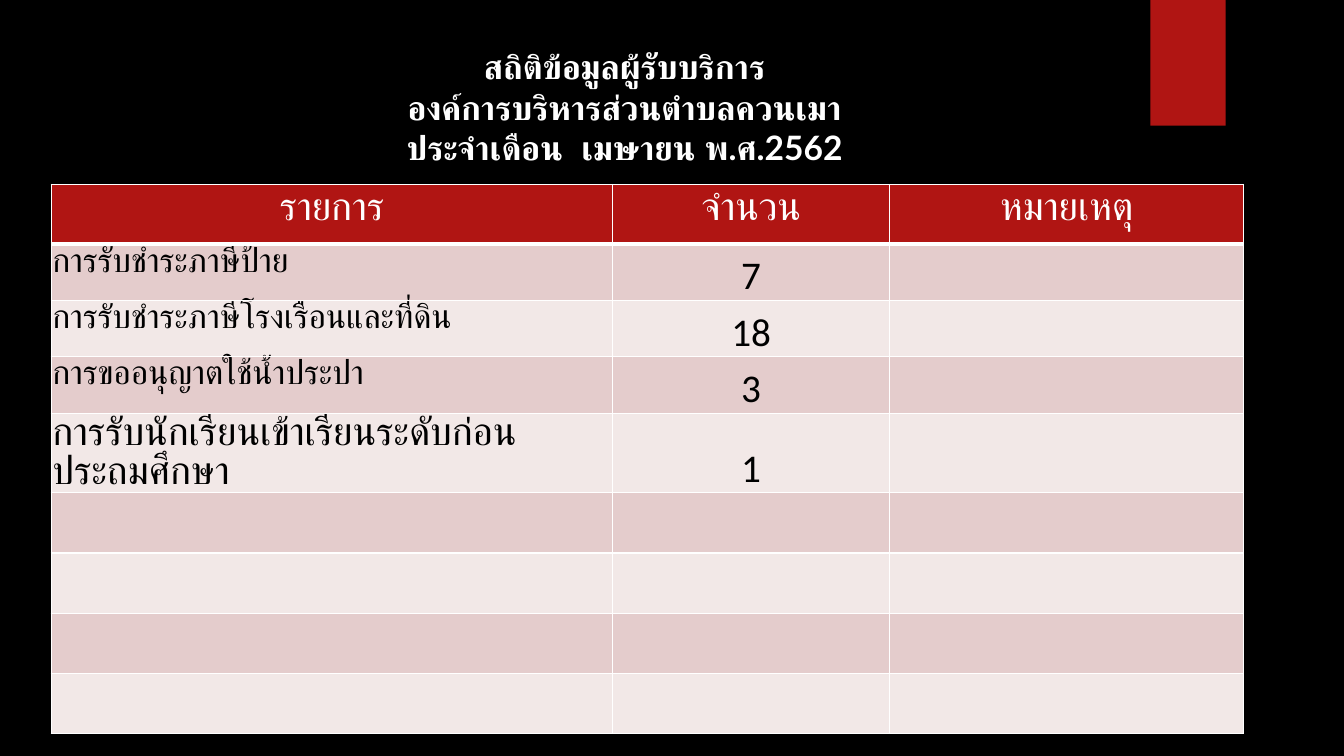
from lxml import etree
from pptx import Presentation
from pptx import util as u
from pptx.dml.color import RGBColor
from pptx.enum import lang, shapes, text
from pptx.oxml.ns import qn

BLACK = RGBColor(0x00, 0x00, 0x00)
WHITE = RGBColor(0xFF, 0xFF, 0xFF)
RED = RGBColor(0xB0, 0x15, 0x13)
BANDS = [RGBColor(0xE4, 0xCC, 0xCC), RGBColor(0xF2, 0xE8, 0xE7)]

TITLE = [
    "สถิติข้อมูลผู้รับบริการ",
    "องค์การบริหารส่วนตำบลควนเมา",
    "ประจำเดือน  เมษายน พ.ศ.2562",
]
HEADINGS = ["รายการ", "จำนวน", "หมายเหตุ"]
# Service, its text size and its count
SERVICES = [
    ("การรับชำระภาษีป้าย", 24, "7"),
    ("การรับชำระภาษีโรงเรือนและที่ดิน", 24, "18"),
    ("การขออนุญาตใช้น้ำประปา", 24, "3"),
    ("การรับนักเรียนเข้าเรียนระดับก่อนประถมศึกษา", 28, "1"),
]
COLUMN_WIDTHS = [14.15, 6.98, 8.92]
ROW_HEIGHTS = [1.5] + [1.42] * 4 + [1.52] * 4


def format_paragraph(paragraph, size, font_name, color, alignment, bold=False):
    paragraph.alignment = alignment
    for run in paragraph.runs:
        run.font.size = u.Pt(size)
        run.font.name = font_name
        run.font.color.rgb = color
        run.font.bold = bold
        run.font.language_id = lang.MSO_LANGUAGE_ID.THAI


def add_red_tab(slide):
    tab = slide.shapes.add_shape(
        shapes.MSO_SHAPE.RECTANGLE, u.Cm(28.99), 0, u.Cm(1.9), u.Cm(3.17))
    tab.shadow.inherit = False
    tab.fill.solid()
    tab.fill.fore_color.rgb = RED
    tab.line.fill.background()


def set_title(slide):
    title = slide.shapes.title
    title.left, title.top = u.Cm(7.04), u.Cm(1.02)
    title.width, title.height = u.Cm(17.4), u.Cm(3.33)
    title.text_frame.text = "\n".join(TITLE)
    title.text_frame.auto_size = text.MSO_AUTO_SIZE.NONE
    for paragraph in title.text_frame.paragraphs:
        format_paragraph(paragraph, 24, "Lato", WHITE, text.PP_ALIGN.CENTER, bold=True)


def set_borders(cell, bottom_width):
    properties = cell._tc.get_or_add_tcPr()
    widths = {"a:lnL": 1, "a:lnR": 1, "a:lnT": 1, "a:lnB": bottom_width}
    for index, (tag, width) in enumerate(widths.items()):
        line = etree.Element(qn(tag), w=str(u.Pt(width)))
        fill = etree.SubElement(line, qn("a:solidFill"))
        etree.SubElement(fill, qn("a:srgbClr"), val=str(WHITE))
        properties.insert(index, line)


def fill_cell(cell, color, bottom_width=1):
    cell.fill.solid()
    cell.fill.fore_color.rgb = color
    set_borders(cell, bottom_width)


def write_cell(cell, words, size, font_name, color, alignment):
    cell.text_frame.text = words
    format_paragraph(cell.text_frame.paragraphs[0], size, font_name, color, alignment)


def tighten(cell, at_bottom):
    cell.margin_left = cell.margin_right = cell.margin_top = u.Cm(0.03)
    cell.margin_bottom = 0
    if at_bottom:
        cell.vertical_anchor = text.MSO_ANCHOR.BOTTOM


def add_service_table(slide):
    table = slide.shapes.add_table(
        len(ROW_HEIGHTS), len(COLUMN_WIDTHS), u.Cm(1.29), u.Cm(4.65),
        u.Cm(sum(COLUMN_WIDTHS)), u.Cm(sum(ROW_HEIGHTS))).table
    for column, width in zip(table.columns, COLUMN_WIDTHS):
        column.width = u.Cm(width)
    for row, height in zip(table.rows, ROW_HEIGHTS):
        row.height = u.Cm(height)

    # Heading row
    for column, heading in enumerate(HEADINGS):
        cell = table.cell(0, column)
        fill_cell(cell, RED, bottom_width=3)
        write_cell(cell, heading, 28, "TeX Gyre Adventor", WHITE, text.PP_ALIGN.CENTER)

    # Banded body
    for row in range(1, len(ROW_HEIGHTS)):
        for column in range(len(COLUMN_WIDTHS)):
            fill_cell(table.cell(row, column), BANDS[(row - 1) % 2])

    # Services and counts
    for row, (service, size, count) in enumerate(SERVICES, start=1):
        name_cell, count_cell = table.cell(row, 0), table.cell(row, 1)
        tighten(name_cell, at_bottom=size == 28)
        tighten(count_cell, at_bottom=True)
        write_cell(name_cell, service, size, "Calibri", BLACK, text.PP_ALIGN.LEFT)
        write_cell(count_cell, count, 28, "Calibri", BLACK, text.PP_ALIGN.CENTER)


def main():
    presentation = Presentation()
    presentation.slide_width = u.Cm(33.87)
    presentation.slide_height = u.Cm(19.05)
    slide = presentation.slides.add_slide(presentation.slide_layouts[5])
    slide.background.fill.solid()
    slide.background.fill.fore_color.rgb = BLACK
    add_red_tab(slide)
    set_title(slide)
    add_service_table(slide)
    presentation.save("out.pptx")


if __name__ == "__main__":
    main()
